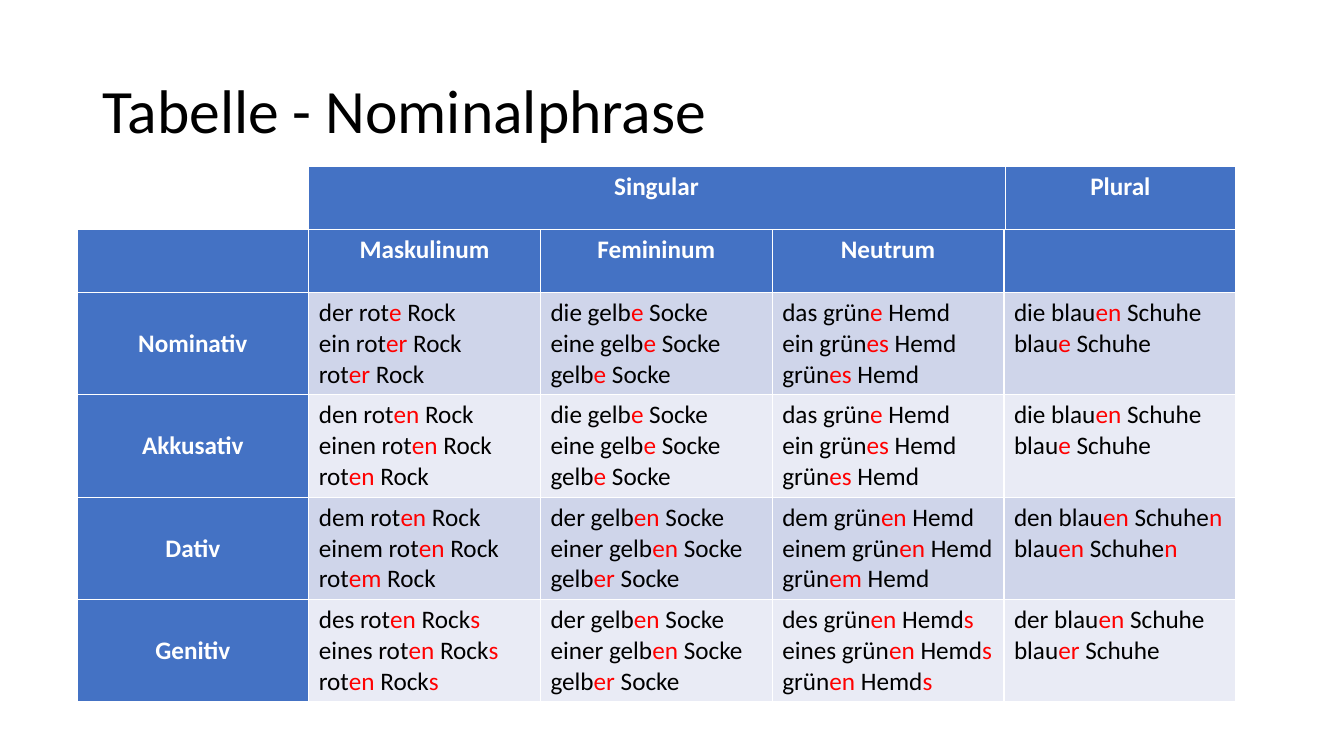
import pptx
import pptx.dml.color
import pptx.enum.text
import pptx.util

Cm = pptx.util.Cm
Pt = pptx.util.Pt
RGBColor = pptx.dml.color.RGBColor
ALIGN = pptx.enum.text.PP_ALIGN
ANCHOR = pptx.enum.text.MSO_ANCHOR

BLACK = RGBColor(0x00, 0x00, 0x00)
WHITE = RGBColor(0xFF, 0xFF, 0xFF)
RED = RGBColor(0xFF, 0x00, 0x00)
BLUE = RGBColor(0x44, 0x72, 0xC4)
BANDS = (RGBColor(0xCF, 0xD5, 0xEA), RGBColor(0xE9, 0xEB, 0xF5))

TITLE_FONT = {"name": "Calibri", "size": Pt(44), "bold": False}
HEAD_FONT = {"name": "Calibri", "size": Pt(18), "bold": True}
BODY_FONT = {"name": "Calibri", "size": Pt(18), "bold": False}

COL_W = Cm(5.84)
HEAD_H = Cm(1.58)
CASE_H = Cm(2.58)
LEFT, TOP = Cm(1.94), Cm(5.79)
SPAN_TOP, SPAN_H = Cm(4.19), Cm(1.6)

GENDERS = ("", "Maskulinum", "Femininum", "Neutrum", "")
CASES = {
    "Nominativ": (
        ("der rot|e| Rock", "ein rot|er| Rock", "rot|er| Rock"),
        ("die gelb|e| Socke", "eine gelb|e| Socke", "gelb|e| Socke"),
        ("das grün|e| Hemd", "ein grün|es| Hemd", "grün|es| Hemd"),
        ("die blau|en| Schuhe", "blau|e| Schuhe"),
    ),
    "Akkusativ": (
        ("den rot|en| Rock", "einen rot|en| Rock", "rot|en| Rock"),
        ("die gelb|e| Socke", "eine gelb|e| Socke", "gelb|e| Socke"),
        ("das grün|e| Hemd", "ein grün|es| Hemd", "grün|es| Hemd"),
        ("die blau|en| Schuhe", "blau|e| Schuhe"),
    ),
    "Dativ": (
        ("dem rot|en| Rock", "einem rot|en| Rock", "rot|em| Rock"),
        ("der gelb|en| Socke", "einer gelb|en| Socke", "gelb|er| Socke"),
        ("dem grün|en| Hemd", "einem grün|en| Hemd", "grün|em| Hemd"),
        ("den blau|en| Schuhe|n", "blau|en| Schuhe|n"),
    ),
    "Genitiv": (
        ("des rot|en| Rock|s", "eines rot|en| Rock|s", "rot|en| Rock|s"),
        ("der gelb|en| Socke", "einer gelb|en| Socke", "gelb|er| Socke"),
        ("des grün|en| Hemd|s", "eines grün|en| Hemd|s", "grün|en| Hemd|s"),
        ("der blau|en| Schuhe", "blau|er| Schuhe"),
    ),
}


def set_font(font, values, color):
    for key, value in values.items():
        setattr(font, key, value)
    font.color.rgb = color


def fill_cell(cell, color):
    cell.fill.solid()
    cell.fill.fore_color.rgb = color


def write_head(cell, text, anchor=ANCHOR.TOP):
    fill_cell(cell, BLUE)
    cell.vertical_anchor = anchor
    p = cell.text_frame.paragraphs[0]
    p.alignment = ALIGN.CENTER
    if text:
        r = p.add_run()
        r.text = text
        set_font(r.font, HEAD_FONT, WHITE)


def write_phrases(cell, phrases, band):
    fill_cell(cell, band)
    tf = cell.text_frame
    for i, phrase in enumerate(phrases):
        p = tf.add_paragraph() if i else tf.paragraphs[0]
        for j, part in enumerate(phrase.split("|")):
            r = p.add_run()
            r.text = part
            set_font(r.font, BODY_FONT, RED if j % 2 else BLACK)


def add_title(slide, text):
    sp = slide.shapes.title
    box = {"left": Cm(2.33), "top": Cm(1.01), "width": Cm(29.21), "height": Cm(3.68)}
    for key, value in box.items():
        setattr(sp, key, value)
    tf = sp.text_frame
    tf.vertical_anchor = ANCHOR.MIDDLE
    p = tf.paragraphs[0]
    p.alignment = ALIGN.LEFT
    p.line_spacing = 0.9
    r = p.add_run()
    r.text = text
    set_font(r.font, TITLE_FONT, BLACK)


def add_case_table(slide):
    rows, cols = len(CASES) + 1, len(GENDERS)
    height = HEAD_H + CASE_H * len(CASES)
    table = slide.shapes.add_table(rows, cols, LEFT, TOP, COL_W * cols, height).table
    for column in table.columns:
        column.width = COL_W
    table.rows[0].height = HEAD_H
    for col, gender in enumerate(GENDERS):
        write_head(table.cell(0, col), gender)
    for row, (case, groups) in enumerate(CASES.items(), 1):
        table.rows[row].height = CASE_H
        write_head(table.cell(row, 0), case, ANCHOR.MIDDLE)
        for col, phrases in enumerate(groups, 1):
            write_phrases(table.cell(row, col), phrases, BANDS[(row - 1) % 2])


def add_span_head(slide, text, left, width):
    table = slide.shapes.add_table(1, 1, left, SPAN_TOP, width, SPAN_H).table
    write_head(table.cell(0, 0), text)


def main():
    prs = pptx.Presentation()
    prs.slide_width, prs.slide_height = Cm(33.87), Cm(19.05)
    slide = prs.slides.add_slide(prs.slide_layouts[5])
    add_title(slide, "Tabelle - Nominalphrase")
    add_case_table(slide)
    add_span_head(slide, "Singular", Cm(7.76), Cm(17.57))
    add_span_head(slide, "Plural", Cm(25.33), Cm(5.81))
    prs.save("out.pptx")


if __name__ == "__main__":
    main()
